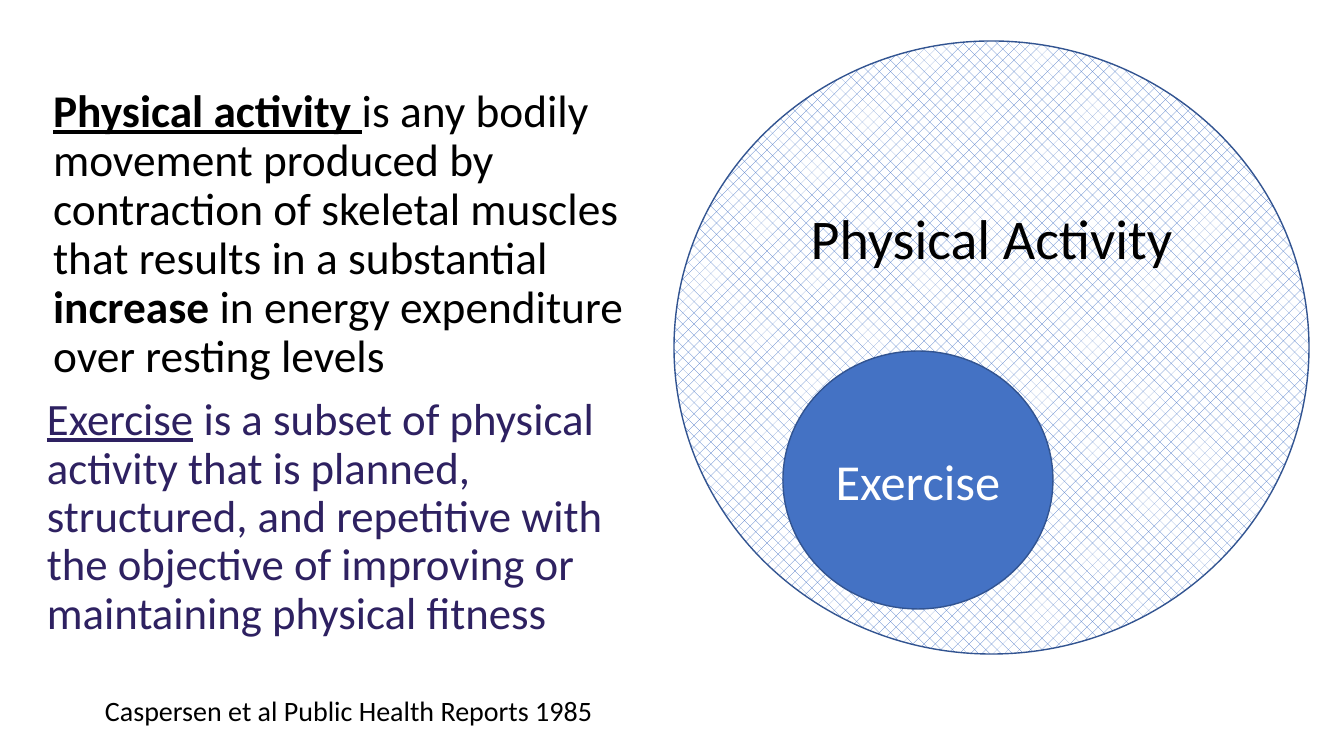
import pptx
import pptx.dml.color
import pptx.enum.dml
import pptx.enum.shapes
import pptx.enum.text
import pptx.util

PX = 914400 / 100.8
SLIDE_SIZE = (1344, 756)
FONT = "Calibri"
BLACK, WHITE, BLUE, OUTLINE, PURPLE = "000000", "FFFFFF", "4472C4", "325491", "2E2161"

LEFT = pptx.enum.text.PP_ALIGN.LEFT
CENTER = pptx.enum.text.PP_ALIGN.CENTER
TOP = pptx.enum.text.MSO_ANCHOR.TOP
MIDDLE = pptx.enum.text.MSO_ANCHOR.MIDDLE

# Boxes are left, top, width, height in px; spans are text, bold, underline.
ACTIVITY_BOX = (43, 67, 616, 337)
ACTIVITY_SPANS = [
    ("Physical activity ", True, True),
    ("is any bodily movement produced by contraction of skeletal muscles "
     "that results in a substantial ", False, False),
    ("increase", True, False),
    (" in energy expenditure over resting levels", False, False),
]
EXERCISE_BOX = (37, 392, 607, 254)
EXERCISE_SPANS = [
    ("Exercise", False, True),
    (" is a subset of physical activity that is planned, structured, and repetitive "
     "with the objective of improving or maintaining physical fitness", False, False),
]
SOURCE_BOX = (95, 689, 513, 44)
SOURCE_SPANS = [("Caspersen et al Public Health Reports 1985", False, False)]

ACTIVITY_CIRCLE = (674, 41, 635, 613)
ACTIVITY_LABEL = [("Physical Activity", False, False)]
ACTIVITY_LABEL_INSET = 73
EXERCISE_CIRCLE = (783, 351, 270, 258)
EXERCISE_LABEL = [("Exercise", False, False)]


def px(length):
    return pptx.util.Emu(round(length * PX))


def color(value):
    return pptx.dml.color.RGBColor.from_string(value)


def write(shape, spans, size, ink, align=LEFT, anchor=TOP, spacing=None, wrap=True):
    frame = shape.text_frame
    frame.word_wrap = wrap
    frame.vertical_anchor = anchor
    para = frame.paragraphs[0]
    para.alignment = align
    para.line_spacing = spacing
    para.font.name = FONT
    para.font.size = pptx.util.Pt(size)
    para.font.color.rgb = color(ink)
    for text, bold, underline in spans:
        span = para.add_run()
        span.text = text
        span.font.bold = bold
        span.font.underline = underline


def add_circle(page, box):
    circle = page.shapes.add_shape(pptx.enum.shapes.MSO_SHAPE.OVAL, *map(px, box))
    circle.shadow.inherit = False
    circle.line.color.rgb = color(OUTLINE)
    circle.line.width = pptx.util.Pt(1)
    return circle


def main():
    deck = pptx.Presentation()
    deck.slide_width, deck.slide_height = map(px, SLIDE_SIZE)
    page = deck.slides.add_slide(deck.slide_layouts.get_by_name("Title Only"))

    title = page.shapes.title
    title.left, title.top, title.width, title.height = map(px, ACTIVITY_BOX)
    write(title, ACTIVITY_SPANS, 32.4, BLACK, anchor=MIDDLE, spacing=0.9)
    title.text_frame.auto_size = pptx.enum.text.MSO_AUTO_SIZE.NONE

    activity = add_circle(page, ACTIVITY_CIRCLE)
    activity.fill.patterned()
    activity.fill.pattern = pptx.enum.dml.MSO_PATTERN.PERCENT_25
    activity.fill.fore_color.rgb = color(BLUE)
    activity.fill.back_color.rgb = color(WHITE)
    write(activity, ACTIVITY_LABEL, 40, BLACK, CENTER)
    activity.text_frame.margin_top = px(ACTIVITY_LABEL_INSET)

    exercise = add_circle(page, EXERCISE_CIRCLE)
    exercise.fill.solid()
    exercise.fill.fore_color.rgb = color(BLUE)
    write(exercise, EXERCISE_LABEL, 36, WHITE, CENTER, MIDDLE)

    definition = page.shapes.add_textbox(*map(px, EXERCISE_BOX))
    write(definition, EXERCISE_SPANS, 32, PURPLE, spacing=0.9)

    source = page.shapes.add_textbox(*map(px, SOURCE_BOX))
    write(source, SOURCE_SPANS, 20, BLACK, wrap=False)

    deck.save("out.pptx")


if __name__ == "__main__":
    main()
